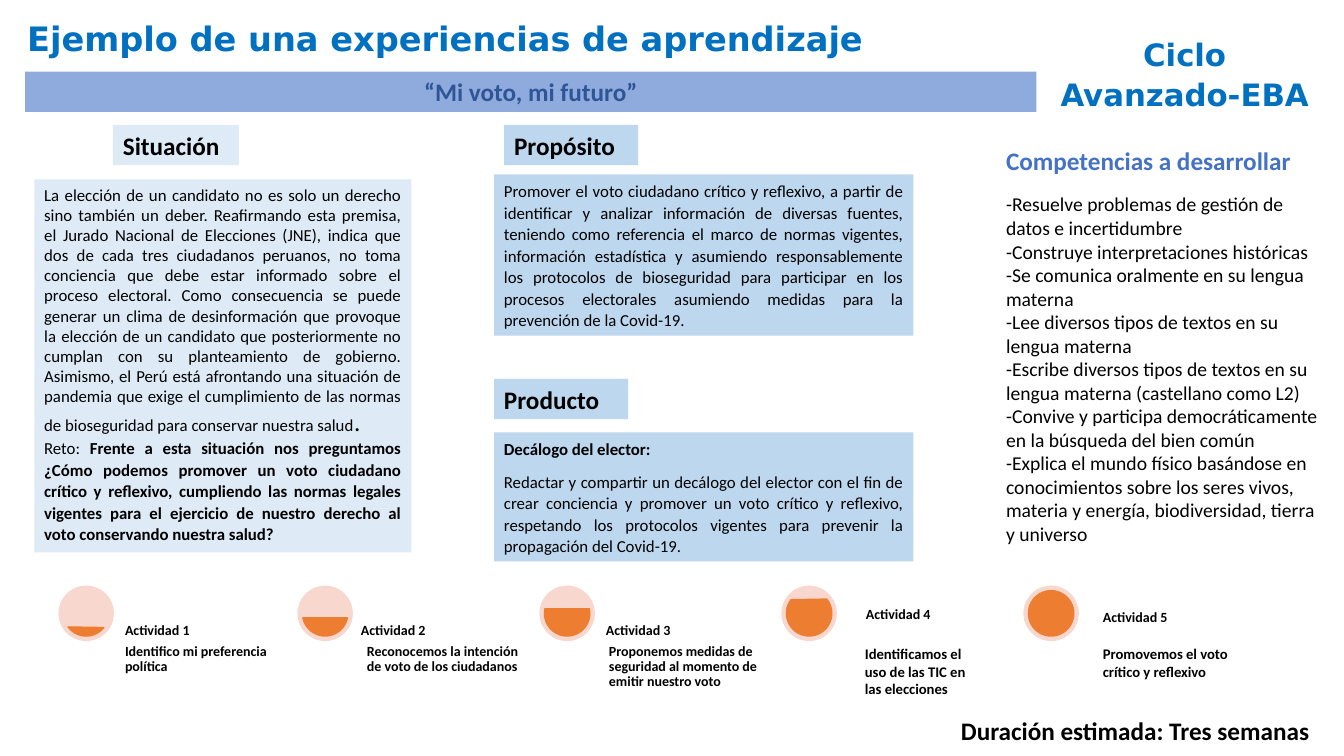
from pptx import Presentation, util as u
from pptx.dml.color import RGBColor
from pptx.enum import shapes, text

WIDE, HIGH = 13.33, 7.5
HUES = {"pale": "DEEBF7", "sky": "BDD7EE", "band": "8FAADC", "navy": "2F5597",
        "blue": "4472C4", "title": "0070C0", "black": "000000",
        "peach": "F8D7CE", "orange": "ED7D31"}
COLS = {"edge": 0.25, "left": 0.34, "mid": 4.9, "right": 9.88}
ALIGN = {"left": text.PP_ALIGN.LEFT, "center": text.PP_ALIGN.CENTER,
         "full": text.PP_ALIGN.JUSTIFY}

TITLE = dict(size=24, font="DejaVu Sans", hue="title", bold=True, lead=1.07)
HEAD = dict(size=18, bold=True)
BODY = dict(size=12, align="full")
LOOSE = dict(BODY, lead=1.07, after=8)
STEP = dict(size=10, bold=True)
TASK = dict(size=10.5, bold=True)

CASE = ("La elección de un candidato no es solo un derecho sino también un deber. "
        "Reafirmando esta premisa, el Jurado Nacional de Elecciones (JNE), indica que "
        "dos de cada tres ciudadanos peruanos, no toma conciencia que debe estar "
        "informado sobre el proceso electoral. Como consecuencia se puede generar un "
        "clima de desinformación que provoque la elección de un candidato que "
        "posteriormente no cumplan con su planteamiento de gobierno. Asimismo, el Perú "
        "está afrontando una situación de pandemia que exige el cumplimiento de las "
        "normas de bioseguridad para conservar nuestra salud")
DARE = ("Frente a esta situación nos preguntamos ¿Cómo podemos promover un voto "
        "ciudadano crítico y reflexivo, cumpliendo las normas legales vigentes para el "
        "ejercicio de nuestro derecho al voto conservando nuestra salud?")
GOAL = ("Promover el voto ciudadano crítico y reflexivo, a partir de identificar y "
        "analizar información de diversas fuentes, teniendo como referencia el marco "
        "de normas vigentes, información estadística y asumiendo responsablemente los "
        "protocolos de bioseguridad para participar en los procesos electorales "
        "asumiendo medidas para la prevención de la Covid-19.")
WORK = ("Redactar y compartir un decálogo del elector con el fin de crear conciencia y "
        "promover un voto crítico y reflexivo, respetando los protocolos vigentes para "
        "prevenir la propagación del Covid-19.")
SKILLS = ["-Resuelve problemas de gestión de datos e incertidumbre",
          "-Construye interpretaciones históricas",
          "-Se comunica oralmente en su lengua materna",
          "-Lee diversos tipos de textos en su lengua materna",
          "-Escribe diversos tipos de textos en su lengua materna (castellano como L2)",
          "-Convive y participa democráticamente en la búsqueda del bien común",
          "-Explica el mundo físico basándose en conocimientos sobre los seres vivos, "
          "materia y energía, biodiversidad, tierra y universo"]

# Each box: left, top, width, height, fill, paragraphs as (format, runs)
BOXES = [
    (0.17, 0.1, 9.85, 0.53, None,
     [(TITLE, ["Ejemplo de una experiencias de aprendizaje"])]),
    (COLS["edge"], 0.71, 10.03, 0.4, "band",
     [(dict(HEAD, hue="navy", align="center"), ["“Mi voto, mi futuro”"])]),
    (10.33, 0.28, 2.84, 0.86, None,
     [(dict(TITLE, size=22, align="center"), ["Ciclo Avanzado-EBA"])]),
    (1.12, 1.24, 1.25, 0.4, "pale", [(HEAD, ["Situación"])]),
    (5, 1.24, 1.33, 0.4, "sky", [(HEAD, ["Propósito"])]),
    (COLS["mid"], 3.76, 1.33, 0.4, "sky", [(HEAD, ["Producto"])]),
    (COLS["right"], 1.39, 3.21, 0.4, None,
     [(dict(HEAD, hue="blue"), ["Competencias a desarrollar"])]),
    (COLS["left"], 1.78, 3.74, 3.7, "pale",
     [(BODY, [CASE, (".", dict(size=18))]),
      (LOOSE, ["Reto: ", (DARE, dict(bold=True))])]),
    (COLS["mid"], 1.73, 4.16, 1.6, "sky", [(LOOSE, [GOAL])]),
    (COLS["mid"], 4.29, 4.16, 1.28, "sky",
     [(dict(LOOSE, bold=True), ["Decálogo del elector:"]), (LOOSE, [WORK])]),
    (COLS["right"], 1.86, 3.32, 3.64, None,
     [(dict(size=14), [skill]) for skill in SKILLS]),
    (9.43, 7.03, 3.66, 0.43, None,
     [(dict(HEAD, align="center", lead=1.07), ["Duración estimada: Tres semanas"])]),
]

# Each step: dial left, chord angles, label left, task left, task
STEPS = [
    (0.58, (23.32, 85.88), 1.21, 1.21, "Identifico mi preferencia política"),
    (2.95, (6.92, 101.08), 3.55, 3.61,
     "Reconocemos la intención de voto de los ciudadanos"),
    (5.35, (209.08, 114.92), 5.98, 6.01,
     "Proponemos medidas de seguridad al momento de emitir nuestro voto"),
    (7.75, (192.68, 130.12), 8.49, 8.48,
     "Identificamos el uso de las TIC en las elecciones"),
    (10.15, (162, 162), 10.84, 10.84, "Promovemos el voto crítico y reflexivo"),
]
ROW, DIAL, RIM = 5.81, 0.55, 0.05

deck = Presentation()
deck.slide_width, deck.slide_height = u.Inches(WIDE), u.Inches(HIGH)
slide = deck.slides.add_slide(deck.slide_layouts[6])


def tint(name):
    return RGBColor.from_string(HUES[name])


def draw(kind, spot, fill, line=None):
    form = slide.shapes.add_shape(kind, *map(u.Inches, spot))
    form.shadow.inherit = False
    form.fill.solid()
    form.fill.fore_color.rgb = tint(fill)
    if line:
        form.line.color.rgb = tint(line)
        form.line.width = u.Pt(1)
    else:
        form.line.fill.background()
    return form


def style(run, look):
    face = {"size": u.Pt(look["size"]), "bold": look.get("bold", False),
            "name": look.get("font", "Calibri")}
    for key, value in face.items():
        setattr(run.font, key, value)
    run.font.color.rgb = tint(look.get("hue", "black"))


def write(spot, fill, paras, pad=None, anchor=text.MSO_ANCHOR.TOP):
    """Place a box, filled or plain, and set its paragraphs."""
    if fill:
        box = draw(shapes.MSO_SHAPE.RECTANGLE, spot, fill)
    else:
        box = slide.shapes.add_textbox(*map(u.Inches, spot))
    frame = box.text_frame
    frame.word_wrap = True
    frame.vertical_anchor = anchor
    if pad is not None:
        for side in ("left", "right", "top", "bottom"):
            setattr(frame, "margin_" + side, u.Inches(pad))
    for i, (look, runs) in enumerate(paras):
        para = frame.add_paragraph() if i else frame.paragraphs[0]
        shape = {"alignment": ALIGN[look.get("align", "left")],
                 "line_spacing": look.get("lead", 1.0),
                 "space_after": u.Pt(look.get("after", 0))}
        for key, value in shape.items():
            setattr(para, key, value)
        for part in runs:
            words, extra = (part, {}) if isinstance(part, str) else part
            run = para.add_run()
            run.text = words
            style(run, {**look, **extra})


for *spot, fill, paras in BOXES:
    write(spot, fill, paras)

for num, (left, turns, tag, note, task) in enumerate(STEPS, 1):
    draw(shapes.MSO_SHAPE.OVAL, (left, ROW, DIAL, DIAL), "peach")
    core = DIAL - 2 * RIM
    chord = draw(shapes.MSO_SHAPE.CHORD, (left + RIM, ROW + RIM, core, core),
                 "orange", "orange")
    for i, turn in enumerate(turns):
        chord.adjustments[i] = turn
    name = f"Actividad {num}"
    if num < 4:
        tight = dict(STEP, lead=0.9)
        write((tag, ROW, 1.62, DIAL), None, [(tight, [name])], 0.03,
              text.MSO_ANCHOR.BOTTOM)
        write((note, ROW + DIAL, 1.62, 0.6), None, [(tight, [task])], 0.03)
    else:
        write((tag, 5.96 if num == 4 else 5.99, 1.55, 0.27), None, [(STEP, [name])])
        write((note, 6.35, 1.3 if num == 4 else 1.5, 0.63), None, [(TASK, [task])])

deck.save("out.pptx")
